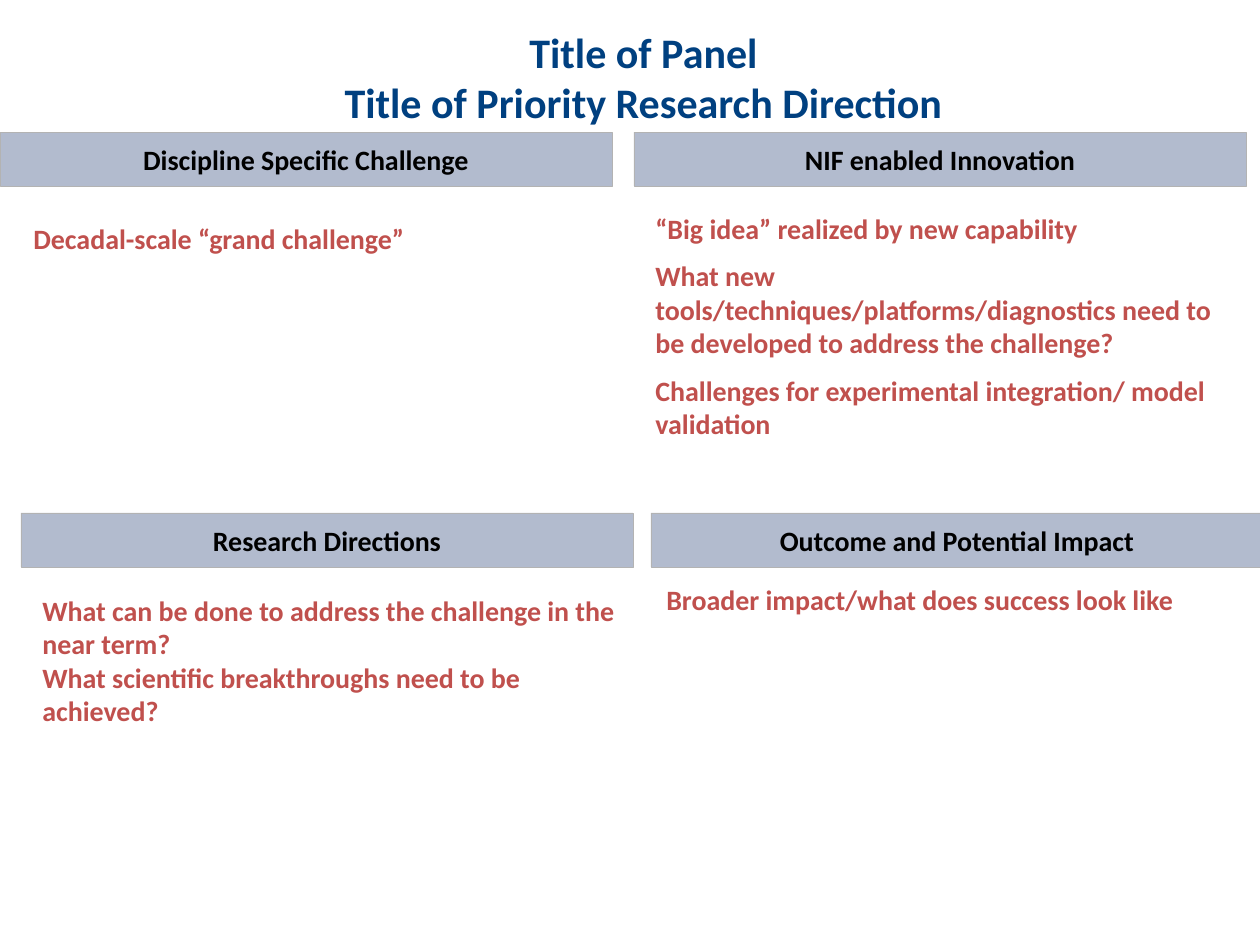
from dataclasses import dataclass

import pptx
import pptx.dml.color
import pptx.enum.shapes
import pptx.enum.text
import pptx.oxml.ns
import pptx.util
from lxml import etree

PX = 914400 // 126
ALIGN = pptx.enum.text.PP_ALIGN
ANCHOR = pptx.enum.text.MSO_ANCHOR


@dataclass(frozen=True)
class Theme:
    font: str = "Calibri"
    title: str = "004080"
    header: str = "000000"
    body: str = "C0504D"
    bar: str = "002060"
    bar_alpha: int = 30
    border: str = "B3B3B3"
    border_pt: float = 0.25
    title_pt: int = 24
    text_pt: int = 16
    gap_pt: int = 8


@dataclass(frozen=True)
class Box:
    x: int
    y: int
    w: int
    h: int

    def emu(self) -> list[int]:
        return [v * PX for v in (self.x, self.y, self.w, self.h)]


@dataclass(frozen=True)
class Panel:
    header: str
    bar_x: int
    bar_y: int
    body: Box
    lines: tuple[str, ...]
    gap: int = 0
    wrap_header: bool = False


THEME = Theme()
BAR_W, BAR_H = 612, 54
TOP_Y, BOTTOM_Y = 132, 513
TITLE_BOX = Box(310, 38, 667, 95)
TITLE_LINES = ("Title of Panel", "Title of Priority Research Direction")

PANELS = (
    Panel("Discipline Specific Challenge", 0, TOP_Y, Box(21, 215, 587, 47),
          ("Decadal-scale “grand challenge”",)),
    Panel("Research Directions", 21, BOTTOM_Y, Box(30, 587, 600, 149),
          ("What can be done to address the challenge in the near term?",
           "What scientific breakthroughs need to be achieved?")),
    Panel("NIF enabled Innovation", 634, TOP_Y, Box(643, 205, 599, 251),
          ("“Big idea” realized by new capability",
           "What new tools/techniques/platforms/diagnostics need to be "
           "developed to address the challenge?",
           "Challenges for experimental integration/ model validation"),
          gap=THEME.gap_pt),
    Panel("Outcome and Potential Impact", 651, BOTTOM_Y, Box(654, 576, 606, 115),
          ("Broader impact/what does success look like",), wrap_header=True),
)


def rgb(value: str) -> pptx.dml.color.RGBColor:
    return pptx.dml.color.RGBColor.from_string(value)


def write(tf, lines: tuple[str, ...], size: int, color: str,
          align=ALIGN.LEFT, gap: int = 0) -> None:
    for i, line in enumerate(lines):
        p = tf.add_paragraph() if i else tf.paragraphs[0]
        p.alignment = align
        if i and gap:
            p.space_before = pptx.util.Pt(gap)
        r = p.add_run()
        r.text = line
        r.font.name = THEME.font
        r.font.size = pptx.util.Pt(size)
        r.font.bold = True
        r.font.color.rgb = rgb(color)


def add_text(s, box: Box, anchor=ANCHOR.TOP):
    tf = s.shapes.add_textbox(*box.emu()).text_frame
    tf.word_wrap = True
    tf.vertical_anchor = anchor
    return tf


def add_bar(s, panel: Panel) -> None:
    box = Box(panel.bar_x, panel.bar_y, BAR_W, BAR_H)
    sp = s.shapes.add_shape(pptx.enum.shapes.MSO_SHAPE.RECTANGLE, *box.emu())
    sp.shadow.inherit = False
    sp.fill.solid()
    sp.fill.fore_color.rgb = rgb(THEME.bar)
    clr = sp.fill._xPr.find(".//" + pptx.oxml.ns.qn("a:srgbClr"))
    etree.SubElement(clr, pptx.oxml.ns.qn("a:alpha"), val=str(THEME.bar_alpha * 1000))
    sp.line.color.rgb = rgb(THEME.border)
    sp.line.width = pptx.util.Pt(THEME.border_pt)
    tf = sp.text_frame
    tf.word_wrap = panel.wrap_header
    tf.vertical_anchor = ANCHOR.MIDDLE
    write(tf, (panel.header,), THEME.text_pt, THEME.header, ALIGN.CENTER)


def add_panel(s, panel: Panel) -> None:
    add_bar(s, panel)
    tf = add_text(s, panel.body)
    tf.auto_size = pptx.enum.text.MSO_AUTO_SIZE.SHAPE_TO_FIT_TEXT
    write(tf, panel.lines, THEME.text_pt, THEME.body, gap=panel.gap)


def main() -> None:
    prs = pptx.Presentation()
    prs.slide_width = pptx.util.Inches(10)
    prs.slide_height = pptx.util.Inches(7.5)
    s = prs.slides.add_slide(prs.slide_layouts[6])
    tf = add_text(s, TITLE_BOX, ANCHOR.BOTTOM)
    write(tf, TITLE_LINES, THEME.title_pt, THEME.title, ALIGN.CENTER)
    for panel in PANELS:
        add_panel(s, panel)
    prs.save("out.pptx")


if __name__ == "__main__":
    main()
